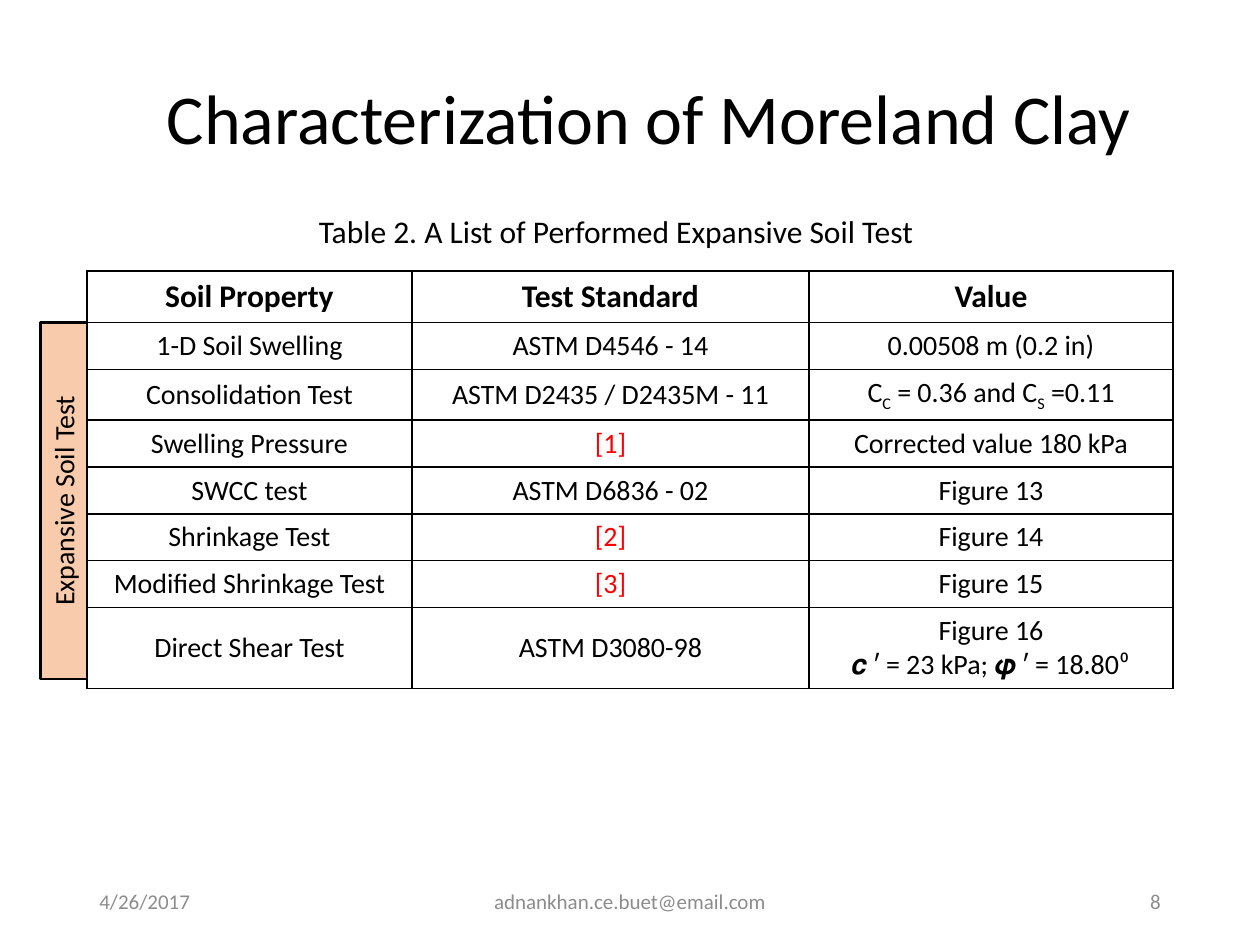
from pptx import Presentation
from pptx.dml.color import RGBColor
from pptx.enum.shapes import MSO_SHAPE as Shape
from pptx.enum.text import MSO_ANCHOR as Anchor, PP_ALIGN as Align
from pptx.oxml import parse_xml
from pptx.oxml.ns import nsdecls
from pptx.util import Inches, Pt

FONT = "Calibri"
COLORS = {"text": "000000", "reference": "FF0000", "footer": "8C8C8C",
          "band": "F8CBAD", "border": "000000"}
COLUMN_WIDTHS = [2.58, 3.15, 2.89]
HEADER_HEIGHT, ROW_HEIGHT = 0.41, 0.34
ROWS = [
    ["Soil Property", "Test Standard", "Value"],
    ["1-D Soil Swelling", "ASTM D4546 - 14", "0.00508 m (0.2 in)"],
    ["Consolidation Test", "ASTM D2435 / D2435M - 11", ""],
    ["Swelling Pressure", "[1]", "Corrected value 180 kPa"],
    ["SWCC test", "ASTM D6836 - 02", "Figure 13"],
    ["Shrinkage Test", "[2]", "Figure 14"],
    ["Modified Shrinkage Test", "[3]", "Figure 15"],
    ["Direct Shear Test", "ASTM D3080-98", "Figure 16\n𝒄 ʹ = 23 kPa; 𝝋 ʹ = 18.80⁰"],
]
INDEX_ROW = 2
INDEX_SPANS = [("C", False), ("C", True), (" = 0.36 and C", False),
               ("S", True), (" =0.11", False)]


def rgb(name):
    return RGBColor.from_string(COLORS[name])


def format_text(frame, size, color="text", align=Align.CENTER, bold=False):
    for para in frame.paragraphs:
        para.alignment = align
        for span in para.runs:
            span.font.name = FONT
            span.font.size = Pt(size)
            span.font.bold = bold
            span.font.color.rgb = rgb(color)


def place(shape, box):
    shape.left, shape.top, shape.width, shape.height = map(Inches, box)


def add_title(page, box, text):
    title = page.shapes.title
    place(title, box)
    frame = title.text_frame
    frame.text = text
    frame.word_wrap = True
    frame.vertical_anchor = Anchor.MIDDLE
    frame.paragraphs[0].line_spacing = 0.9
    format_text(frame, 40)


def add_label(page, box, text, size, color="text", align=Align.CENTER, anchor=Anchor.TOP):
    frame = page.shapes.add_textbox(*map(Inches, box)).text_frame
    frame.text = text
    frame.word_wrap = True
    frame.vertical_anchor = anchor
    format_text(frame, size, color, align)


def add_side_band(page, box, text):
    band = page.shapes.add_shape(Shape.RECTANGLE, *map(Inches, box))
    band.rotation = 270
    band.shadow.inherit = False
    band.fill.solid()
    band.fill.fore_color.rgb = rgb("band")
    band.line.color.rgb = rgb("border")
    band.line.width = Pt(1.5)
    frame = band.text_frame
    frame.text = text
    frame.word_wrap = True
    frame.vertical_anchor = Anchor.TOP
    format_text(frame, 16)


def outline_cell(cell):
    properties = cell._tc.get_or_add_tcPr()
    for index, side in enumerate("LRTB"):
        properties.insert(index, parse_xml(
            f'<a:ln{side} {nsdecls("a")} w="{Pt(1)}"><a:solidFill>'
            f'<a:srgbClr val="{COLORS["border"]}"/></a:solidFill></a:ln{side}>'))


def write_index_values(cell):
    para = cell.text_frame.paragraphs[0]
    for text, lowered in INDEX_SPANS:
        span = para.add_run()
        span.text = text
        if lowered:
            span.font._element.set("baseline", "-25000")


def add_test_table(page, box):
    table = page.shapes.add_table(len(ROWS), len(COLUMN_WIDTHS), *map(Inches, box)).table
    table.horz_banding = False
    for column, width in zip(table.columns, COLUMN_WIDTHS):
        column.width = Inches(width)
    for row_index, texts in enumerate(ROWS):
        header = row_index == 0
        table.rows[row_index].height = Inches(HEADER_HEIGHT if header else ROW_HEIGHT)
        for column_index, text in enumerate(texts):
            cell = table.cell(row_index, column_index)
            cell.vertical_anchor = Anchor.MIDDLE
            cell.fill.background()
            outline_cell(cell)
            if text:
                cell.text_frame.text = text
            elif row_index == INDEX_ROW:
                write_index_values(cell)
            color = "reference" if text.startswith("[") else "text"
            format_text(cell.text_frame, 18 if header else 16, color, bold=header)


def add_footer(page, top, height):
    for left, width, text, align in [
        (0.69, 2.25, "4/26/2017", Align.LEFT),
        (3.31, 3.38, "adnankhan.ce.buet@email.com", Align.CENTER),
        (7.06, 2.25, "8", Align.RIGHT),
    ]:
        add_label(page, (left, top, width, height), text, 12, "footer", align, Anchor.MIDDLE)


def main():
    deck = Presentation()
    deck.slide_width, deck.slide_height = Inches(10), Inches(7.5)
    page = deck.slides.add_slide(deck.slide_layouts[5])
    add_title(page, (0.98, 0.4, 8.34, 1.13), "Characterization of Moreland Clay")
    table_height = HEADER_HEIGHT + ROW_HEIGHT * (len(ROWS) - 1)
    add_test_table(page, (0.69, 2.15, sum(COLUMN_WIDTHS), table_height))
    add_label(page, (0.72, 1.63, 8.34, 0.4),
              "Table 2. A List of Performed Expansive Soil Test", 18)
    add_side_band(page, (-0.91, 3.79, 2.83, 0.37), "Expansive Soil Test")
    add_footer(page, 6.95, 0.4)
    deck.save("out.pptx")


if __name__ == "__main__":
    main()
